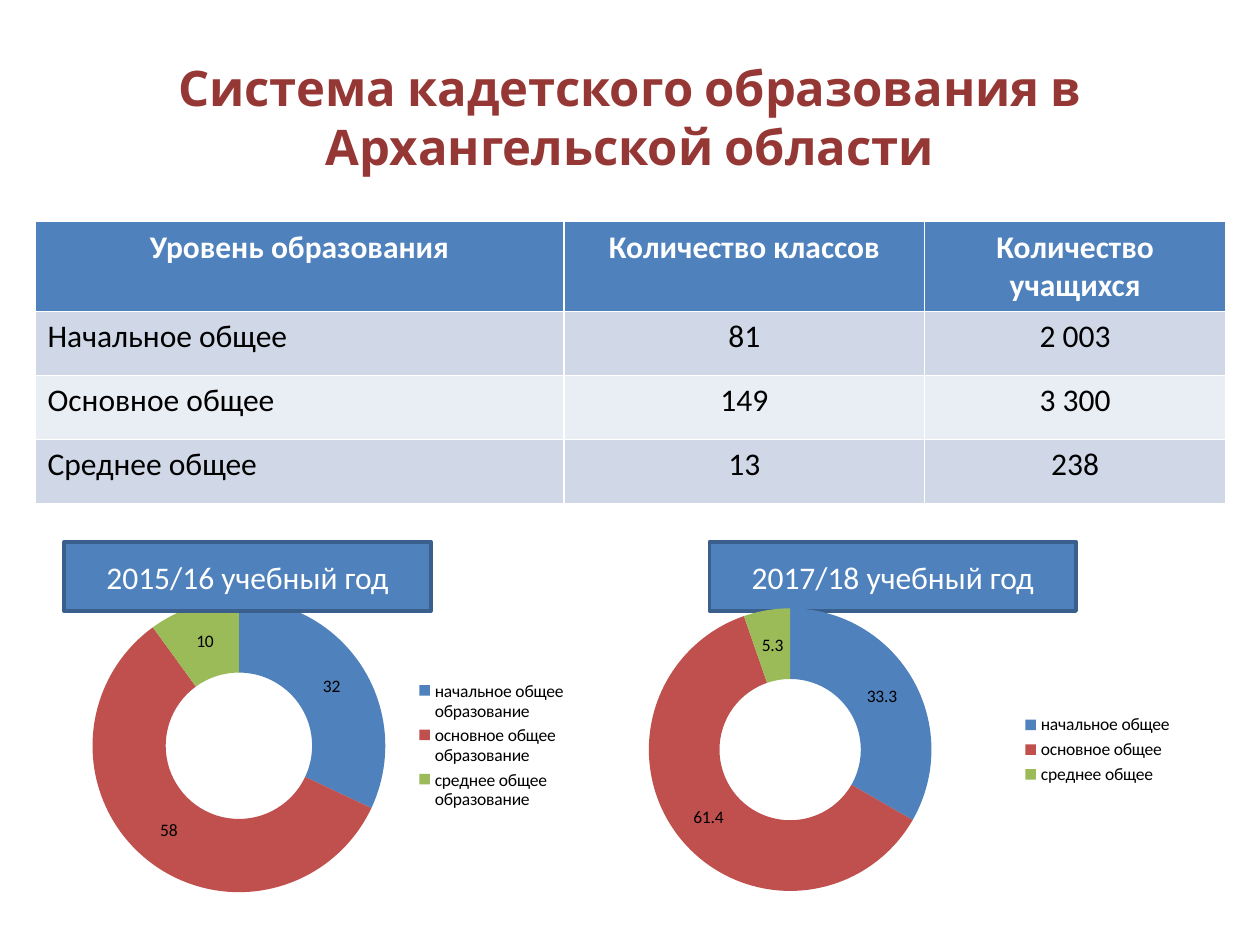
from pptx import Presentation
from pptx.chart.data import CategoryChartData
from pptx.dml.color import RGBColor
from pptx.enum.chart import XL_CHART_TYPE, XL_LEGEND_POSITION
from pptx.enum.shapes import MSO_SHAPE
from pptx.enum.text import MSO_ANCHOR, PP_ALIGN
from pptx.util import Pt

DOUGHNUT = XL_CHART_TYPE.DOUGHNUT
RIGHT = XL_LEGEND_POSITION.RIGHT
RECT = MSO_SHAPE.RECTANGLE
MIDDLE = MSO_ANCHOR.MIDDLE
LEFT, CENTER = PP_ALIGN.LEFT, PP_ALIGN.CENTER

BLUE, WHITE, BLACK = "4F81BD", "FFFFFF", "000000"
BANDS = ["D0D8E8", "E9EDF4"]
SLICES = [BLUE, "C0504D", "9BBB59"]
LEVELS = ["начальное общее", "основное общее", "среднее общее"]
ROWS = [
    ["Уровень образования", "Количество классов", "Количество учащихся"],
    ["Начальное общее", "81", "2 003"],
    ["Основное общее", "149", "3 300"],
    ["Среднее общее", "13", "238"],
]


def rgb(color):
    """Turn a hex string into a colour."""
    return RGBColor.from_string(color)


def points(box):
    """Turn a box of numbers into lengths in points."""
    return [Pt(v) for v in box]


def set_font(font, size, color, name="Calibri", bold=False):
    """Format a font."""
    font.name, font.size, font.bold = name, Pt(size), bold
    font.color.rgb = rgb(color)


def set_fill(shape, color):
    """Give a shape, cell or chart point a solid fill."""
    shape.fill.solid()
    shape.fill.fore_color.rgb = rgb(color)


def place_title(s, box, text):
    """Move and format the title placeholder."""
    title = s.shapes.title
    title.left, title.top, title.width, title.height = points(box)
    tf = title.text_frame
    tf.text = text
    tf.vertical_anchor = MIDDLE
    p = tf.paragraphs[0]
    p.alignment = CENTER
    set_font(p.font, 28, "953735", "Cabin", True)


def add_levels_table(s, box, widths, heights):
    """Add the table of classes and pupils by level."""
    table = s.shapes.add_table(len(ROWS), len(widths), *points(box)).table
    for column, width in zip(table.columns, widths):
        column.width = Pt(width)
    for i, (row, height) in enumerate(zip(table.rows, heights)):
        row.height = Pt(height)
        header = i == 0
        for j, cell in enumerate(row.cells):
            cell.text = ROWS[i][j]
            set_fill(cell, BLUE if header else BANDS[(i - 1) % 2])
            p = cell.text_frame.paragraphs[0]
            p.alignment = CENTER if header or j else LEFT
            set_font(p.font, 18, WHITE if header else BLACK, bold=header)


def add_year_label(s, box, text):
    """Add the box that names a school year."""
    sp = s.shapes.add_shape(RECT, *points(box))
    sp.shadow.inherit = False
    set_fill(sp, BLUE)
    sp.line.color.rgb = rgb("3A5F8C")
    sp.line.width = Pt(2)
    tf = sp.text_frame
    tf.word_wrap = True
    tf.vertical_anchor = MIDDLE
    p = tf.paragraphs[0]
    p.text = text
    p.alignment = CENTER
    set_font(p.font, 18, WHITE)


def add_doughnut(s, box, categories, values):
    """Add a doughnut chart of shares by level."""
    data = CategoryChartData()
    data.categories = categories
    data.add_series("Series 1", values)
    chart = s.shapes.add_chart(DOUGHNUT, *points(box), data).chart
    set_font(chart.font, 10, BLACK)
    chart.has_title = False
    chart.has_legend = True
    chart.legend.position = RIGHT
    chart.legend.include_in_layout = False
    plot = chart.plots[0]
    plot.vary_by_categories = True
    plot.has_data_labels = True
    labels = plot.data_labels
    labels.show_value = True
    labels.show_percentage = False
    set_font(labels.font, 10, BLACK)
    for i, color in enumerate(SLICES):
        set_fill(plot.series[0].points[i].format, color)


def main():
    """Build the slide and save it."""
    prs = Presentation()
    prs.slide_width, prs.slide_height = Pt(720), Pt(540)
    s = prs.slides.add_slide(prs.slide_layouts[5])
    place_title(s, (36, 21.6, 648, 90),
                "Система кадетского образования в Архангельской области")
    add_levels_table(s, (20, 126.7, 680.4, 160.6),
                     [302.4, 206, 172], [50.5] + [36.7] * 3)
    full_names = [f"{level} образование" for level in LEVELS]
    add_doughnut(s, (36.7, 332.6, 294.5, 187.2), full_names, [32, 58, 10])
    for left, year in ((36.7, "2015/16"), (405.4, "2017/18")):
        add_year_label(s, (left, 309.6, 209.5, 39.6), f"{year} учебный год")
    add_doughnut(s, (320.4, 337.7, 357.1, 181.4), LEVELS, [33.3, 61.4, 5.3])
    prs.save("out.pptx")


if __name__ == "__main__":
    main()
